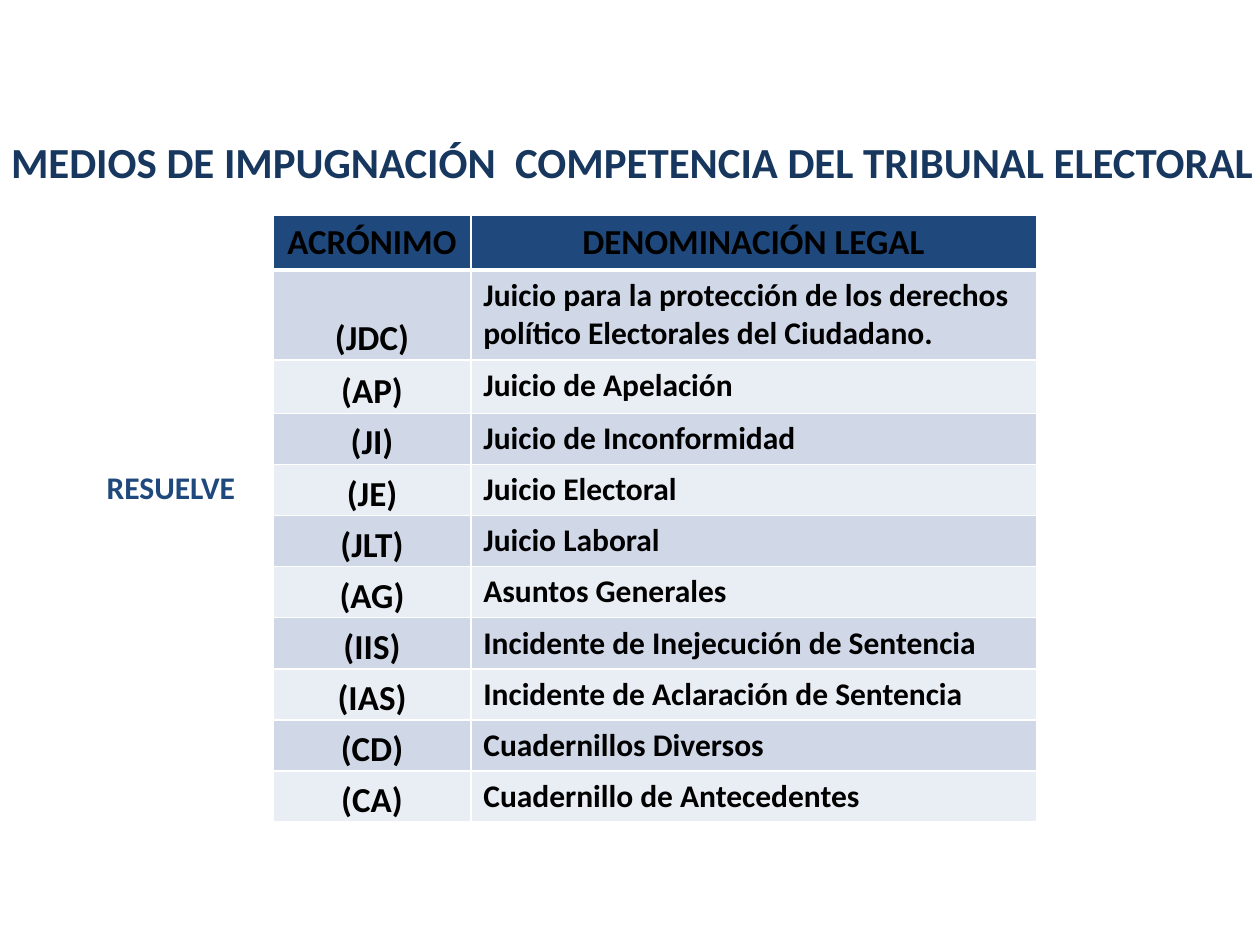
"""Build a slide that lists the legal remedies an electoral court resolves."""
import pptx
import pptx.dml.color
import pptx.enum.text
import pptx.oxml
import pptx.oxml.ns
import pptx.util

Cm = pptx.util.Cm
ALIGN = pptx.enum.text.PP_ALIGN
ANCHOR = pptx.enum.text.MSO_ANCHOR


def tint(hue):
    return pptx.dml.color.RGBColor.from_string(hue)


def write(frame, text, size, hue, align):
    frame.text = text
    frame.word_wrap = True
    para = frame.paragraphs[0]
    para.alignment = align
    font = para.runs[0].font
    font.name = "Calibri"
    font.size = pptx.util.Pt(size)
    font.bold = True
    font.color.rgb = tint(hue)


deck = pptx.Presentation()
deck.slide_width, deck.slide_height = Cm(25.4), Cm(19.05)
slide = deck.slides.add_slide(deck.slide_layouts[6])

title = slide.shapes.add_textbox(Cm(-0.4), Cm(2.62), Cm(26.3), Cm(1.32))
write(title.text_frame, "MEDIOS DE IMPUGNACIÓN  COMPETENCIA DEL TRIBUNAL ELECTORAL",
      24.5, "17375E", ALIGN.CENTER)
label = slide.shapes.add_textbox(Cm(1.9), Cm(9.32), Cm(3.2), Cm(1.02))
write(label.text_frame, "RESUELVE", 18, "1F497D", ALIGN.LEFT)

rows = [
    ("ACRÓNIMO", "DENOMINACIÓN LEGAL"),
    ("(JDC)", "Juicio para la protección de los derechos político Electorales del Ciudadano."),
    ("(AP)", "Juicio de Apelación"),
    ("(JI)", "Juicio de Inconformidad"),
    ("(JE)", "Juicio Electoral"),
    ("(JLT)", "Juicio Laboral"),
    ("(AG)", "Asuntos Generales"),
    ("(IIS)", "Incidente de Inejecución de Sentencia"),
    ("(IAS)", "Incidente de Aclaración de Sentencia"),
    ("(CD)", "Cuadernillos Diversos"),
    ("(CA)", "Cuadernillo de Antecedentes"),
]
highs = [1.07, 1.82, 1.07] + [1.03] * 8
wides = [3.98, 11.4]
grid = slide.shapes.add_table(len(rows), len(wides), Cm(5.51), Cm(4.34),
                              Cm(sum(wides)), Cm(sum(highs))).table
for col, wide in zip(grid.columns, wides):
    col.width = Cm(wide)

for r, (pair, high) in enumerate(zip(rows, highs)):
    grid.rows[r].height = Cm(high)
    for c, text in enumerate(pair):
        cell = grid.cell(r, c)
        head, code = r == 0, c == 0
        write(cell.text_frame, text, 20 if head or code else 18, "000000",
              ALIGN.CENTER if head or code else ALIGN.LEFT)
        if code and not head:
            cell.vertical_anchor = ANCHOR.BOTTOM
            cell.margin_left = cell.margin_right = cell.margin_top = Cm(0.03)
            cell.margin_bottom = 0
        props = cell._tc.get_or_add_tcPr()
        for side in "LRTB":
            thick = (r, side) in [(0, "B"), (1, "T")]
            props.append(pptx.oxml.parse_xml(
                f'<a:ln{side} {pptx.oxml.ns.nsdecls("a")} w="{38100 if thick else 12700}">'
                f'<a:solidFill><a:srgbClr val="FFFFFF"/></a:solidFill></a:ln{side}>'))
        cell.fill.solid()
        cell.fill.fore_color.rgb = tint("1F497D" if head else "D0D8E8" if r % 2 else "E9EDF4")

deck.save("out.pptx")
